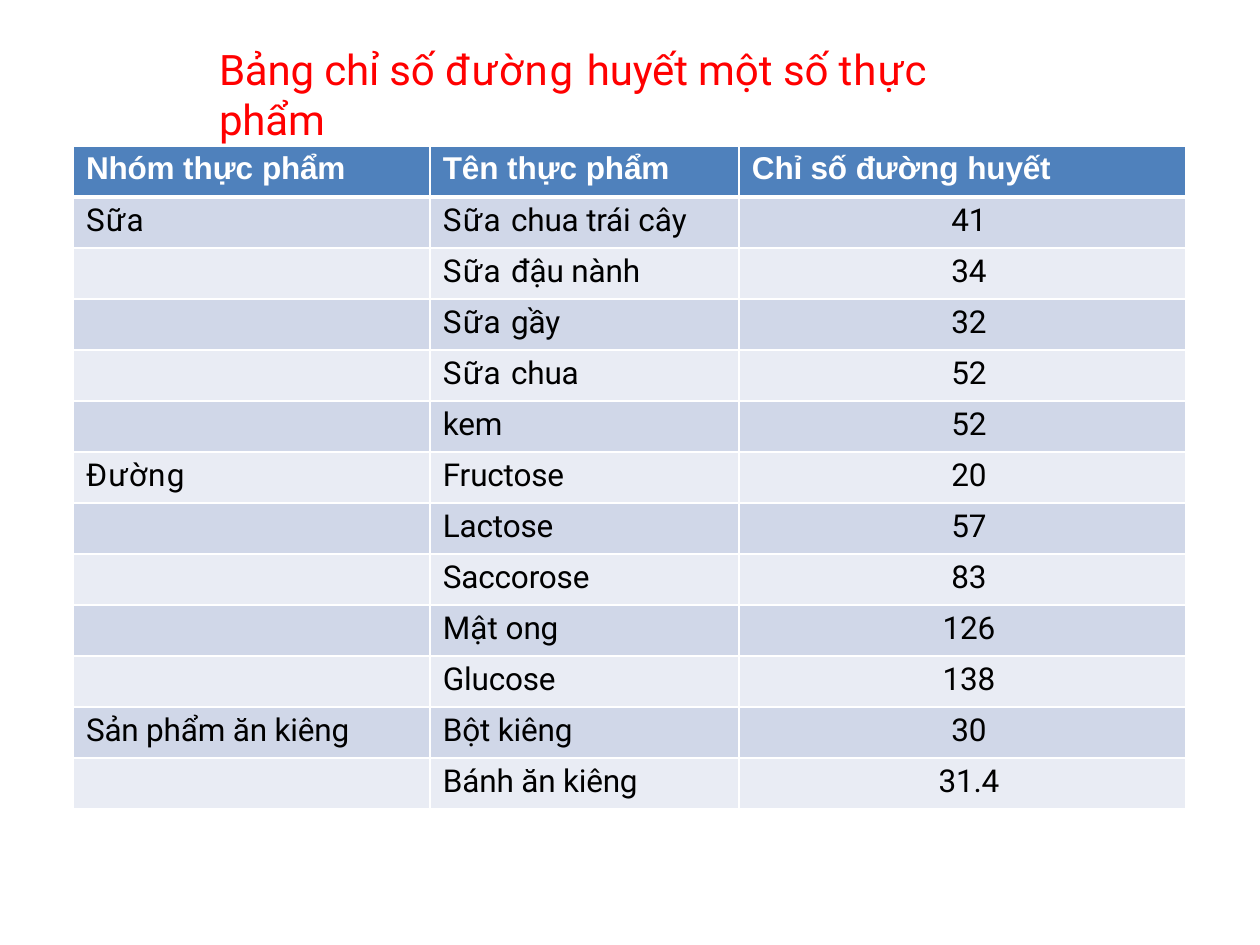
from pptx import Presentation
from pptx.dml.color import RGBColor as Rgb
from pptx.enum.text import MSO_ANCHOR as Anchor, MSO_AUTO_SIZE as Fit, PP_ALIGN as Align
from pptx.oxml.ns import qn
from pptx.util import Pt
from lxml.etree import SubElement as Sub

TITLE = "Bảng chỉ số đường huyết một số thực phẩm"
HEAD = ("Nhóm thực phẩm", "Tên thực phẩm", "Chỉ số đường huyết")
GROUPS = [
    ("Sữa", [("Sữa chua trái cây", "41"), ("Sữa đậu nành", "34"),
             ("Sữa gầy", "32"), ("Sữa chua", "52"), ("kem", "52")]),
    ("Đường", [("Fructose", "20"), ("Lactose", "57"), ("Saccorose", "83"),
               ("Mật ong", "126"), ("Glucose", "138")]),
    ("Sản phẩm ăn kiêng", [("Bột kiêng", "30"), ("Bánh ăn kiêng", "31.4")]),
]
HEX = {"title": "FF0000", "head": "4F81BC", "dark": "D0D7E8",
       "light": "E9ECF4", "white": "FFFFFF", "black": "000000"}
WIDE = {
    "title": {"đường": 90, "một": 0, "thực": 60},
    "head": {"thực": 0, "đường": 0},
    "body": {"Sữa": 70, "Đường": 70, "Mật": 0, "cây": 0},
}
COLS = (357, 309, 447)
ROW = 51
PX = 914400 / 126


def px(n):
    return round(n * PX)


def color(name):
    return Rgb.from_string(HEX[name])


def write(frame, text, font="Roboto", size=18, tint="black", bold=False,
          wide="body", align=Align.LEFT, before=3.1, indent=13):
    para = frame.paragraphs[0]
    para.alignment = align
    para.space_before = Pt(before)
    props = para._p.get_or_add_pPr()
    props.set("marL", str(px(indent)))
    props.set("indent", "0")
    words = text.split()
    for i, word in enumerate(words):
        run = para.add_run()
        run.text = word + (" " if i < len(words) - 1 else "")
        run.font.name, run.font.size, run.font.bold = font, Pt(size), bold
        run.font.color.rgb = color(tint)
        run._r.get_or_add_rPr().set("spc", str(WIDE[wide].get(word, -10)))


def border(cell, **widths):
    props = cell._tc.get_or_add_tcPr()
    for side in "LRTB":
        line = Sub(props, qn("a:ln" + side), w=str(Pt(widths.get(side, 1))))
        fill = Sub(line, qn("a:solidFill"))
        Sub(fill, qn("a:srgbClr"), val=HEX["white"])


deck = Presentation()
deck.slide_width, deck.slide_height = px(1260), px(945)
slide = deck.slides.add_slide(deck.slide_layouts[5])

title = slide.shapes.title
title.left, title.top, title.width, title.height = map(px, (218, 42, 825, 54))
frame = title.text_frame
frame.margin_left = frame.margin_right = frame.margin_bottom = 0
frame.margin_top = px(1)
frame.word_wrap = True
frame.vertical_anchor = Anchor.TOP
frame.auto_size = Fit.SHAPE_TO_FIT_TEXT
write(frame, TITLE, size=24, tint="title", wide="title", before=1, indent=1)

rows = [HEAD] + [(group if i == 0 else "", name, value)
                 for group, foods in GROUPS
                 for i, (name, value) in enumerate(foods)]
table = slide.shapes.add_table(len(rows), len(COLS), px(73), px(146),
                               px(sum(COLS)), px(ROW * len(rows))).table
for col, width in zip(table.columns, COLS):
    col.width = px(width)

for r, row in enumerate(rows):
    table.rows[r].height = px(ROW)
    for c, text in enumerate(row):
        cell = table.cell(r, c)
        cell.margin_left = cell.margin_right = cell.margin_bottom = 0
        cell.margin_top = px(5)
        border(cell, T=3 if r == 1 else 1, B=3 if r == 0 else 1)
        cell.fill.solid()
        shade = "head" if r == 0 else "dark" if r % 2 else "light"
        cell.fill.fore_color.rgb = color(shade)
        if r == 0:
            write(cell.text_frame, text, font="Arial", tint="white",
                  bold=True, wide="head")
        elif text:
            write(cell.text_frame, text,
                  align=Align.CENTER if c == 2 else Align.LEFT)

deck.save("out.pptx")
